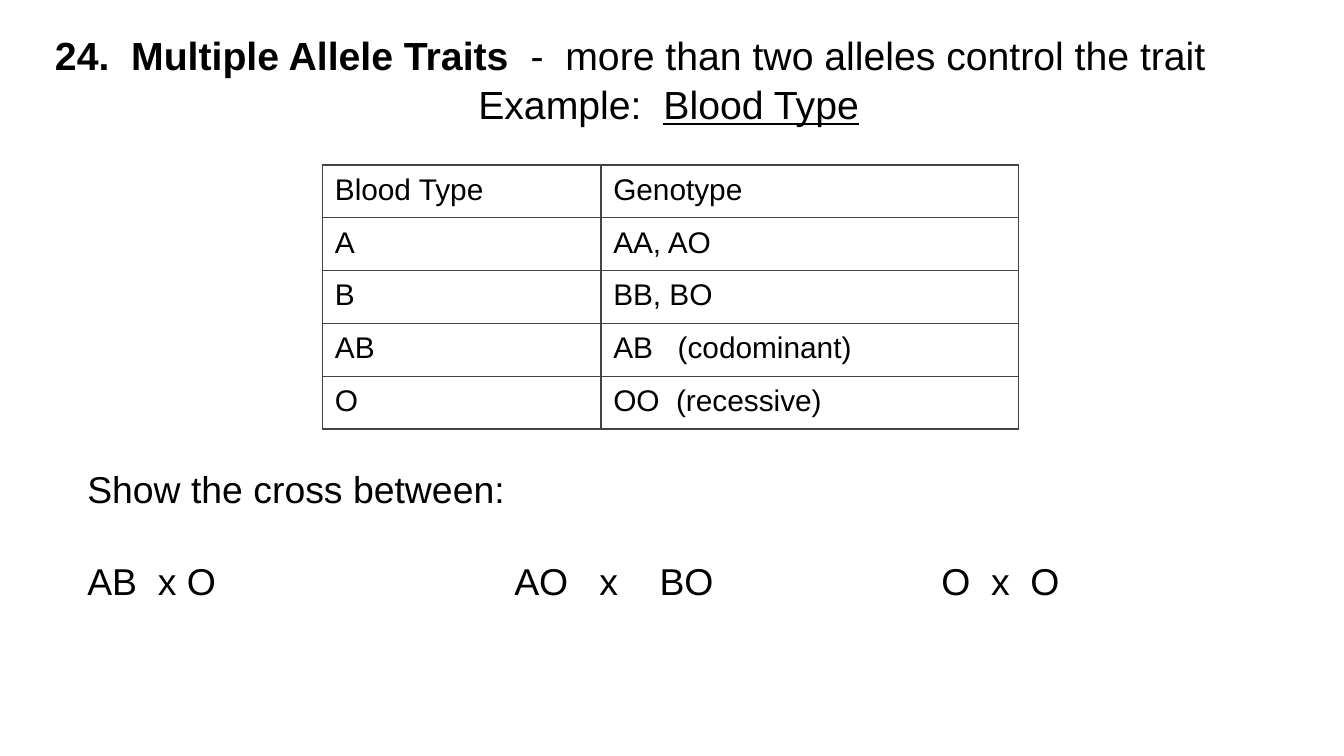
from dataclasses import dataclass

from lxml import etree
from pptx import Presentation
from pptx.dml.color import RGBColor
from pptx.oxml.ns import qn
from pptx.util import Cm, Pt


@dataclass(frozen=True)
class Theme:
    """Colours, font and type sizes of the slide."""
    font: str = "Arial"
    ink: str = "000000"
    paper: str = "FFFFFF"
    rule: str = "434343"
    title: int = 21
    body: int = 20
    table: int = 16
    leading: float = 1.05


THEME = Theme()
BLOOD_TYPES = [
    ("Blood Type", "Genotype"),
    ("A", "AA, AO"),
    ("B", "BB, BO"),
    ("AB", "AB   (codominant)"),
    ("O", "OO  (recessive)"),
]
CROSSES = ["AB  x O", "AO   x    BO", "O  x  O"]


def add_run(p, text, size, **formats):
    """Append a run in the theme font, with any extra font formats."""
    r = p.add_run()
    r.text = text
    r.font.color.rgb = RGBColor.from_string(THEME.ink)
    for name, value in {"name": THEME.font, "size": Pt(size), **formats}.items():
        setattr(r.font, name, value)


def add_text_box(s, box):
    """Add a wrapping text box of two paragraphs and return them."""
    tf = s.shapes.add_textbox(*map(Cm, box)).text_frame
    formats = {"word_wrap": True, "margin_left": Cm(0.2), "margin_right": Cm(0.2),
               "margin_top": Cm(0.24), "margin_bottom": Cm(0.2)}
    for name, value in formats.items():
        setattr(tf, name, value)
    tf.add_paragraph()
    for p in tf.paragraphs:
        p.line_spacing = THEME.leading
    return tf.paragraphs


def add_title(s, box):
    """Place the heading with its indented example line."""
    heading, example = add_text_box(s, box)
    add_run(heading, "24.  Multiple Allele Traits", THEME.title, bold=True)
    add_run(heading, "  -  more than two alleles control the trait", THEME.title)
    example._p.get_or_add_pPr().set("marL", str(Cm(8)))
    add_run(example, "Example:  ", THEME.title)
    add_run(example, "Blood Type", THEME.title, underline=True)


def style_cell(cell):
    """Give a cell its margins, plain fill and four thin borders."""
    formats = {"margin_left": Cm(0.23), "margin_right": Cm(0.23),
               "margin_top": Cm(0.16), "margin_bottom": Cm(0.16)}
    for name, value in formats.items():
        setattr(cell, name, value)
    cell.fill.solid()
    cell.fill.fore_color.rgb = RGBColor.from_string(THEME.paper)
    tcPr = cell._tc.get_or_add_tcPr()
    for i, side in enumerate("LRTB"):
        ln = etree.Element(qn(f"a:ln{side}"), w=str(Pt(0.75)))
        fill = etree.SubElement(ln, qn("a:solidFill"))
        etree.SubElement(fill, qn("a:srgbClr"), val=THEME.rule)
        tcPr.insert(i, ln)


def add_genotype_table(s, box):
    """Place the table of blood types, with columns in a 2 to 3 ratio."""
    left, top, width, height = map(Cm, box)
    table = s.shapes.add_table(len(BLOOD_TYPES), 2, left, top, width, height).table
    table.first_row = table.horz_banding = False
    for column, share in zip(table.columns, (0.4, 0.6)):
        column.width = int(width * share)
    for row, texts in zip(table.rows, BLOOD_TYPES):
        for cell, text in zip(row.cells, texts):
            style_cell(cell)
            add_run(cell.text_frame.paragraphs[0], text, THEME.table)


def add_crosses(s, box):
    """Place the prompt above the crosses, set on equal tab stops."""
    prompt, crosses = add_text_box(s, box)
    add_run(prompt, "Show the cross between:", THEME.body)
    crosses.space_before = Pt(24)
    tabs = etree.SubElement(crosses._p.get_or_add_pPr(), qn("a:tabLst"))
    for i in range(1, len(CROSSES)):
        etree.SubElement(tabs, qn("a:tab"), pos=str(Cm(8.07 * i)), algn="l")
    add_run(crosses, "\t".join(CROSSES), THEME.body)


def main():
    """Build the slide and save it."""
    prs = Presentation()
    prs.slide_width, prs.slide_height = Cm(25.4), Cm(14.29)
    s = prs.slides.add_slide(prs.slide_layouts[6])
    add_title(s, (0.84, 0.3, 23.7, 2.64))
    add_genotype_table(s, (6.1, 3.12, 13.15, 4.85))
    add_crosses(s, (1.45, 8.53, 22.5, 3.91))
    prs.save("out.pptx")


if __name__ == "__main__":
    main()
